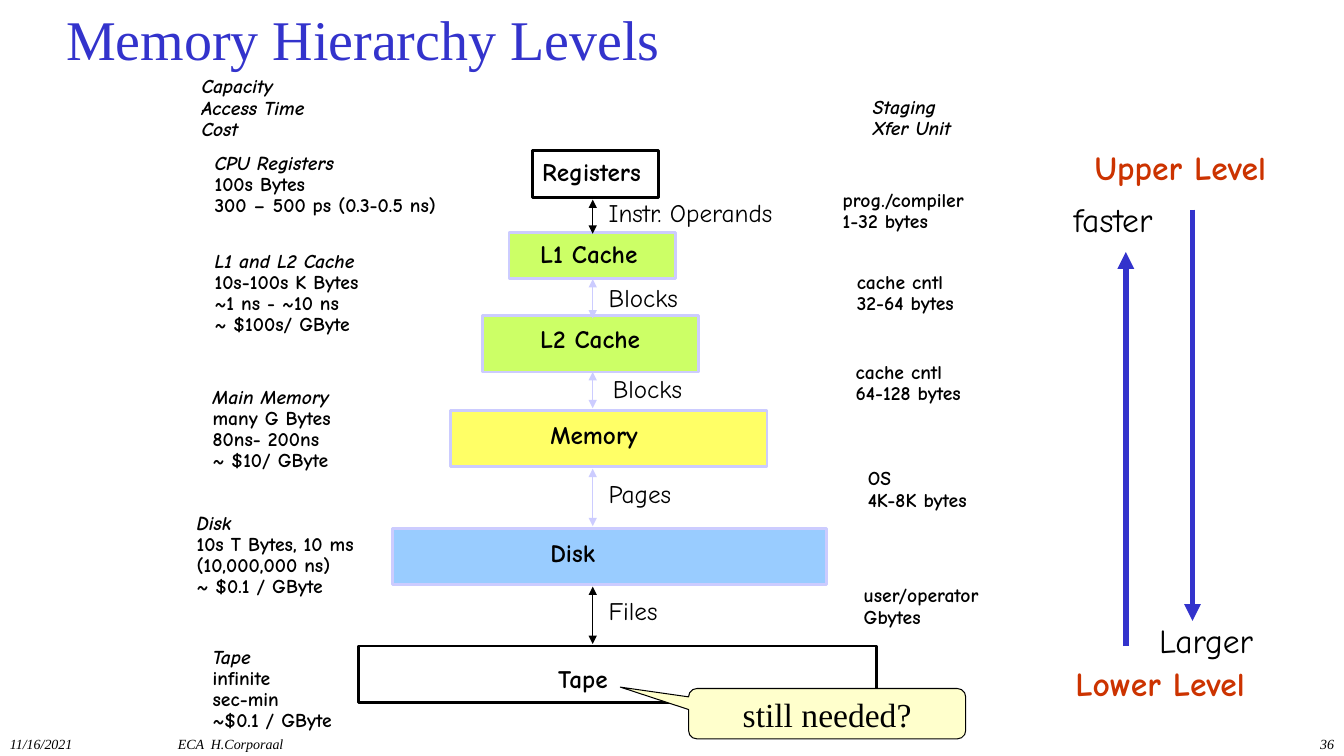
from pptx import Presentation
from pptx.dml.color import RGBColor
from pptx.enum.shapes import MSO_CONNECTOR, MSO_SHAPE
from pptx.enum.text import MSO_ANCHOR, MSO_AUTO_SIZE, PP_ALIGN
from pptx.oxml.ns import qn
from pptx.util import Pt
from lxml.etree import SubElement

HAND, SERIF = "Comic Neue", "Times New Roman"
BLACK, BLUE, LILAC, RED = "000000", "3333CC", "CCCCFF", "CC3300"
GREEN, YELLOW, SKY, CREAM = "CCFF66", "FFFF66", "99CCFF", "FFFFCC"
AXIS_X = 423.4

# name, box (left, top, width, height), fill, outline, label (left, top, width)
LEVELS = [
    ("Registers", (380.2, 107.3, 90, 33.8), None, BLACK, (382.3, 112.3, 91.4)),
    ("L1 Cache", (363.6, 166.3, 118.8, 32.4), GREEN, LILAC, (380.9, 171.4, 89.3)),
    ("L2 Cache", (344.9, 225.4, 154.1, 40.3), GREEN, LILAC, (380.9, 231.8, 89.3)),
    ("Memory", (321.8, 293, 226.1, 40.3), YELLOW, LILAC, (388.1, 300.2, 79.2)),
    ("Disk", (280.1, 377.3, 310.3, 40.3), SKY, LILAC, (388.1, 384.5, 46.8)),
    ("Tape", (256.3, 461.5, 370.1, 40.3), None, BLACK, (393.8, 474.5, 59.8)),
]

# name, label (left, top, width), arrow top, arrow bottom, arrow colour
TRANSFERS = [
    ("Instr. Operands", (429.8, 141.8, 145.4), 142.6, 167, BLACK),
    ("Blocks", (429.8, 202.3, 63.4), 199.4, 227.5, LILAC),
    ("Blocks", (432.7, 267.8, 63.4), 265.7, 291.6, LILAC),
    ("Pages", (429.8, 342.7, 56.9), 334.8, 375.8, LILAC),
    ("Files", (429.8, 426.2, 49.7), 419, 460, BLACK),
]

# place (left, top, width), number of italic lines, lines
NOTES = [
    ((139, 52.6, 162), 3, ["Capacity", "Access Time", "Cost"]),
    ((148.3, 107.3, 191.5), 1,
     ["CPU Registers", "100s Bytes", "300 – 500 ps (0.3-0.5 ns)"]),
    ((148.3, 177.1, 134.6), 1,
     ["L1 and L2 Cache", "10s-100s K Bytes", "~1 ns - ~10 ns", "~ $100s/ GByte"]),
    ((146.9, 274.3, 105.1), 1,
     ["Main Memory", "many G Bytes", "80ns- 200ns", "~ $10/ GByte"]),
    ((135.4, 364.3, 154.8), 1,
     ["Disk", "10s T Bytes, 10 ms \v(10,000,000 ns)", "~ $0.1 / GByte"]),
    ((146.9, 460.1, 112.3), 1, ["Tape", "infinite", "sec-min", "~$0.1 / GByte"]),
    ((618.5, 67, 76.3), 2, ["Staging", "Xfer Unit"]),
    ((596.9, 133.9, 108.7), 0, ["prog./compiler", "1-32 bytes"]),
    ((607, 192.2, 96.5), 0, ["cache cntl", "32-64 bytes"]),
    ((606.2, 256.3, 104.4), 0, ["cache cntl", "64-128 bytes"]),
    ((614.9, 332.6, 96.5), 0, ["OS", "4K-8K bytes"]),
    ((612, 416.2, 105.1), 0, ["user/operator", "Gbytes"]),
]

# text, place (left, top, width), bold, colour
DIRECTIONS = [
    ("Upper Level", (776.9, 107.3, 148.3), True, RED),
    ("faster", (761.8, 144, 82.8), False, BLACK),
    ("Larger", (823, 445, 85), False, BLACK),
    ("Lower Level", (763.2, 475.2, 146.9), True, RED),
]

# text, left, width, alignment
FOOTERS = [
    ("11/16/2021", 0, 120, PP_ALIGN.LEFT),
    ("ECA  H.Corporaal", 120, 304, PP_ALIGN.LEFT),
    ("36", 760, 200, PP_ALIGN.RIGHT),
]


def color(hex_string):
    return RGBColor.from_string(hex_string)


def style(paragraph, size, name, hex_color=BLACK, bold=False, italic=False):
    font = paragraph.font
    font.size, font.name = Pt(size), name
    font.bold, font.italic = bold, italic
    font.color.rgb = color(hex_color)


def add_title(slide, text):
    title = slide.shapes.title
    title.left, title.top, title.width, title.height = map(Pt, (40, 12.2, 896, 30.2))
    frame = title.text_frame
    frame.text = text
    frame.auto_size = MSO_AUTO_SIZE.NONE
    frame.vertical_anchor = MSO_ANCHOR.MIDDLE
    frame.paragraphs[0].alignment = PP_ALIGN.LEFT
    style(frame.paragraphs[0], 40, SERIF, BLUE)


def add_text(slide, place, lines, size, spacing=0.85, italic_lines=0,
             hex_color=BLACK, bold=False):
    height = len(lines) * size * 1.1 + 4
    frame = slide.shapes.add_textbox(*map(Pt, (*place, height))).text_frame
    frame.word_wrap = True
    frame.margin_left = frame.margin_right = Pt(5)
    frame.margin_top = frame.margin_bottom = Pt(2.4)
    for number, line in enumerate(lines):
        paragraph = frame.add_paragraph() if number else frame.paragraphs[0]
        paragraph.text = line
        paragraph.line_spacing = spacing
        style(paragraph, size, HAND, hex_color, bold, number < italic_lines)


def add_footer(slide, text, left, width, alignment):
    frame = slide.shapes.add_textbox(Pt(left), Pt(522), Pt(width), Pt(18)).text_frame
    frame.word_wrap = True
    paragraph = frame.paragraphs[0]
    paragraph.text, paragraph.alignment = text, alignment
    style(paragraph, 10, SERIF, italic=True)


def add_box(slide, kind, place, fill, outline, weight):
    box = slide.shapes.add_shape(kind, *map(Pt, place))
    box.shadow.inherit = False
    if fill:
        box.fill.solid()
        box.fill.fore_color.rgb = color(fill)
    else:
        box.fill.background()
    box.line.color.rgb = color(outline)
    box.line.width = Pt(weight)
    return box


def add_arrow(slide, x, start, end, hex_color, weight, ends=("tailEnd",)):
    arrow = slide.shapes.add_connector(
        MSO_CONNECTOR.STRAIGHT, Pt(x), Pt(start), Pt(x), Pt(end))
    arrow.line.color.rgb = color(hex_color)
    arrow.line.width = Pt(weight)
    properties = arrow.element.spPr
    for tag in ends:
        SubElement(properties.find(qn("a:ln")), qn(f"a:{tag}"), type="triangle")
    SubElement(properties, qn("a:effectLst"))


def add_callout(slide, text):
    callout = add_box(slide, MSO_SHAPE.ROUNDED_RECTANGULAR_CALLOUT,
                      (491.8, 491.8, 198, 36), CREAM, BLACK, 0.75)
    for index, value in enumerate((-0.746, -0.528, 0.167)):
        callout.adjustments[index] = value
    paragraph = callout.text_frame.paragraphs[0]
    paragraph.text, paragraph.alignment = text, PP_ALIGN.CENTER
    style(paragraph, 24, SERIF)


def main():
    presentation = Presentation()
    presentation.slide_width, presentation.slide_height = Pt(960), Pt(540)
    slide = presentation.slides.add_slide(presentation.slide_layouts[5])

    add_title(slide, "Memory Hierarchy Levels")
    for footer in FOOTERS:
        add_footer(slide, *footer)

    # Pyramid of memory levels
    for name, place, fill, outline, label in LEVELS:
        add_box(slide, MSO_SHAPE.RECTANGLE, place, fill, outline, 2)
        add_text(slide, label, [name], 18, bold=True)

    # Transfers between levels
    for name, label, top, bottom, hex_color in TRANSFERS:
        add_arrow(slide, AXIS_X, top, bottom, hex_color, 1, ("headEnd", "tailEnd"))
        add_text(slide, label, [name], 18)

    # Capacity, access time and cost on the left, staging units on the right
    for place, italic_lines, lines in NOTES:
        add_text(slide, place, lines, 14, 0.9, italic_lines, bold=True)

    # Speed and size directions
    for text, place, bold, hex_color in DIRECTIONS:
        add_text(slide, place, [text], 24, hex_color=hex_color, bold=bold)
    add_arrow(slide, 804.2, 461.5, 180, BLUE, 4)
    add_arrow(slide, 851.8, 149.8, 443.5, BLUE, 4)

    add_callout(slide, "still needed?")
    presentation.save("out.pptx")


if __name__ == "__main__":
    main()
